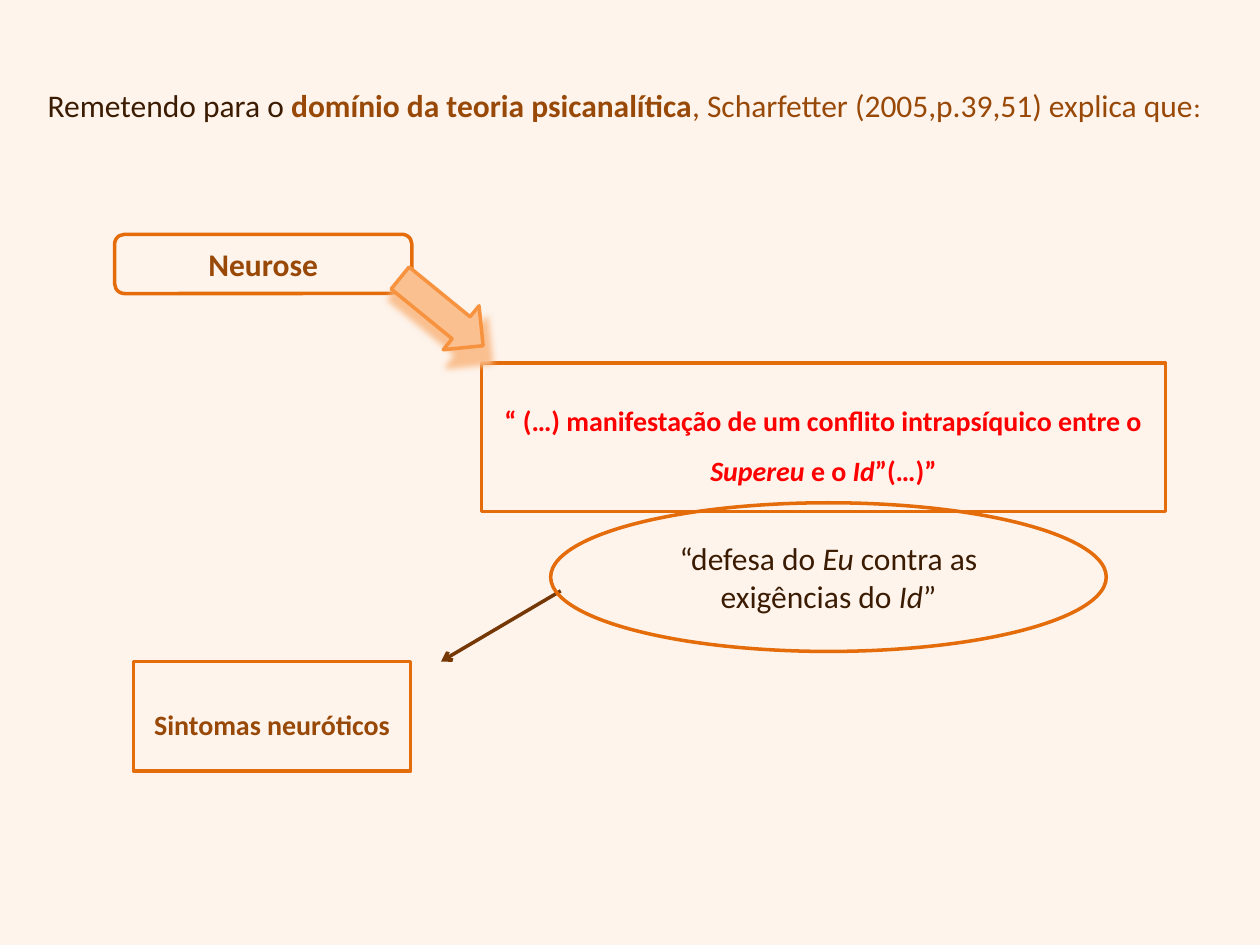
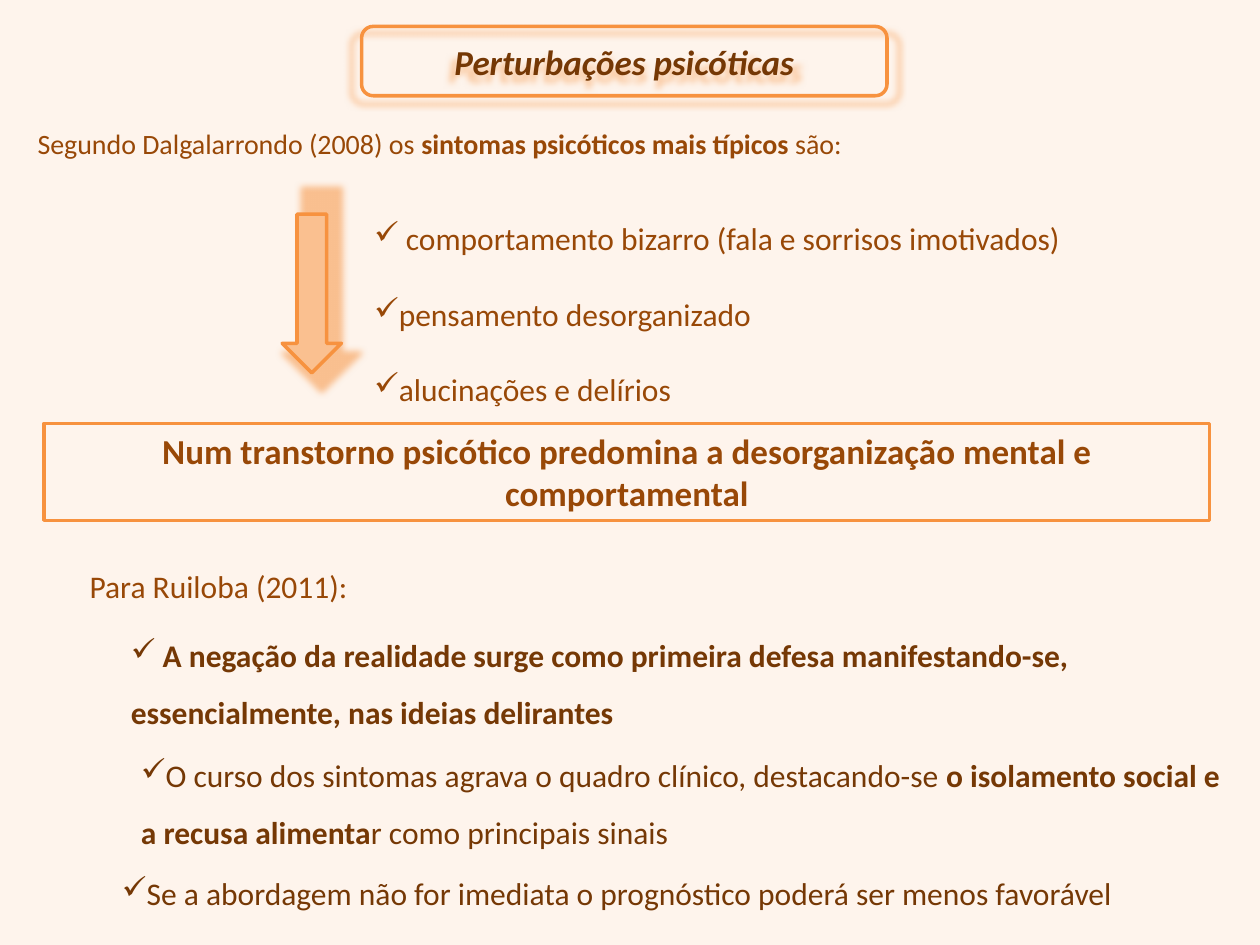
from dataclasses import dataclass

from lxml.etree import SubElement
from pptx import Presentation
from pptx.dml.color import RGBColor
from pptx.enum.shapes import MSO_CONNECTOR as Connector, MSO_SHAPE as Shape
from pptx.enum.text import MSO_ANCHOR as Anchor, MSO_AUTO_SIZE as AutoSize, PP_ALIGN as Align
from pptx.oxml.ns import qn
from pptx.util import Emu, Inches, Pt


@dataclass(frozen=True)
class Theme:
    """Colours, type sizes and line width shared by the slides."""
    font: str = "Calibri"
    background: str = "FEF4EC"
    dark: str = "3B1C03"
    deep: str = "753805"
    brown: str = "984807"
    alert: str = "FF0000"
    frame: str = "E46C0A"
    accent: str = "F7923F"
    soft: str = "FAC090"
    small: int = 16
    body: int = 18
    large: int = 20
    stroke: float = 2


@dataclass(frozen=True)
class Box:
    """An area on a grid of 100 columns by 75 rows."""
    column: float
    row: float
    columns: float
    rows: float

    def inside(self, column, row, columns, rows):
        """Return an area placed relative to this one."""
        return Box(self.column + column, self.row + row, columns, rows)

    def lengths(self):
        """Return left, top, width and height as lengths."""
        return [Emu(round(cells * CELL)) for cells in
                (self.column, self.row, self.columns, self.rows)]


THEME = Theme()
CELL = Inches(0.1)
PAGE = Box(0, 0, 100, 75)
BOLD, PLAIN, ITALIC = {"bold": True}, {"bold": False}, {"italic": True}


def rgb(value):
    """Turn a hex string into a colour."""
    return RGBColor.from_string(value)


def apply(target, values):
    """Set every attribute named in a dict."""
    for name, value in values.items():
        setattr(target, name, value)


def write(shape, paragraphs, size, color, bold=False, italic=False, align=Align.LEFT,
          spacing=1.0, bullet=None, **frame_values):
    """Fill a shape with paragraphs made of (text, changes) runs."""
    frame = shape.text_frame
    apply(frame, {"word_wrap": True, **frame_values})
    for index, runs in enumerate(paragraphs):
        paragraph = frame.paragraphs[0] if index == 0 else frame.add_paragraph()
        apply(paragraph, {"alignment": align, "line_spacing": spacing})
        if bullet:
            SubElement(paragraph._p.get_or_add_pPr(), qn("a:buChar"), char=bullet)
        for text, changes in runs:
            values = {"name": THEME.font, "size": Pt(size), "bold": bold,
                      "italic": italic, "color": color, **changes}
            run = paragraph.add_run()
            run.text = text
            run.font.color.rgb = rgb(values.pop("color"))
            apply(run.font, values)


def add_text(slide, box, paragraphs, **style):
    """Add a text box."""
    write(slide.shapes.add_textbox(*box.lengths()), paragraphs, **style)


def add_checks(slide, box, paragraphs, color, spacing):
    """Add a list marked with ticks."""
    add_text(slide, box, paragraphs, size=THEME.body, color=color, spacing=spacing,
             bullet="✓", auto_size=AutoSize.SHAPE_TO_FIT_TEXT)


def add_outline(slide, kind, box, line, fill=None):
    """Add a preset shape with a coloured outline."""
    shape = slide.shapes.add_shape(kind, *box.lengths())
    shape.shadow.inherit = False
    if fill:
        shape.fill.solid()
        shape.fill.fore_color.rgb = rgb(fill)
    else:
        shape.fill.background()
    shape.line.color.rgb = rgb(line)
    shape.line.width = Pt(THEME.stroke)
    return shape


def add_label(slide, kind, box, line, runs, **style):
    """Add an outlined shape with centred text."""
    shape = add_outline(slide, kind, box, line)
    write(shape, [runs], **{"align": Align.CENTER, "vertical_anchor": Anchor.MIDDLE, **style})
    return shape


def cast_shadow(shape, distance, direction, wide, high):
    """Give a shape a soft, scaled shadow."""
    effects = shape._element.spPr.find(qn("a:effectLst"))
    values = {"blurRad": Pt(4), "dist": Pt(distance), "dir": direction * 60000,
              "sx": wide * 1000, "sy": high * 1000, "algn": "ctr", "rotWithShape": 0}
    shadow = SubElement(effects, qn("a:outerShdw"),
                        {name: str(int(value)) if name != "algn" else value
                         for name, value in values.items()})
    SubElement(shadow, qn("a:srgbClr"), val=THEME.soft)


def add_block_arrow(slide, box, rotation, **shadow):
    """Add a filled arrow with its shadow."""
    arrow = add_outline(slide, Shape.DOWN_ARROW, box, THEME.accent, THEME.soft)
    arrow.rotation = rotation
    cast_shadow(arrow, **shadow)


def add_thin_arrow(slide, box, start, end):
    """Draw a line with an arrowhead between two points of a box."""
    points = [length for point in (start, end)
              for length in box.inside(*point, 0, 0).lengths()[:2]]
    connector = slide.shapes.add_connector(Connector.STRAIGHT, *points)
    connector.line.color.rgb = rgb(THEME.deep)
    connector.line.width = Pt(THEME.stroke)
    properties = connector._element.spPr
    SubElement(properties.find(qn("a:ln")), qn("a:tailEnd"), type="arrow")
    SubElement(properties, qn("a:effectLst"))


def neurosis_intro(slide, box):
    """Write the sentence that opens the neurosis slide."""
    brown = {"color": THEME.brown}
    add_text(slide, box, [[
        ("Remetendo para o ", {}),
        ("domínio da teoria psicanalítica", {**brown, **BOLD}),
        (", Scharfetter (2005,p.39,51) explica que", brown),
        (":", {**brown, "size": Pt(THEME.small)})]],
        size=THEME.body, color=THEME.dark, spacing=1.5, vertical_anchor=Anchor.MIDDLE)


def neurosis_diagram(slide, box):
    """Draw the way from neurosis to its symptoms."""
    add_label(slide, Shape.ROUNDED_RECTANGLE, box.inside(0, 0, 23.6, 4.7), THEME.frame,
              [("Neurose", {})], size=THEME.body, color=THEME.brown, bold=True)
    add_label(slide, Shape.RECTANGLE, box.inside(29.1, 10.2, 54.3, 11.8), THEME.frame, [
        ("“ (…) manifestação de um conflito intrapsíquico entre o ", {}),
        ("Supereu ", ITALIC), ("e o", {}), (" Id", ITALIC), ("”(…)”", {})],
        size=THEME.small, color=THEME.alert, bold=True, spacing=1.5)
    add_label(slide, Shape.RECTANGLE, box.inside(1.5, 33.9, 22, 8.7), THEME.frame,
              [("Sintomas neuróticos", {})],
              size=THEME.small, color=THEME.brown, bold=True, spacing=1.5)
    add_thin_arrow(slide, box, (35.4, 28.3), (25.9, 33.9))
    add_label(slide, Shape.OVAL, box.inside(34.6, 21.3, 44.1, 11.8), THEME.frame, [
        ("“defesa do ", {}), ("Eu", ITALIC), (" contra as exigências do ", {}),
        ("Id", ITALIC), ("”", {})], size=THEME.body, color=THEME.dark)
    add_block_arrow(slide, box.inside(23.7, 1.9, 4.5, 8.5), 309.2,
                    distance=10, direction=90, wide=110, high=110)


def psychosis_title(slide, box):
    """Draw the framed title of the psychosis slide."""
    title = add_label(slide, Shape.ROUNDED_RECTANGLE, box, THEME.accent,
                      [("Perturbações psicóticas", {})],
                      size=THEME.large, color=THEME.deep, bold=True, italic=True)
    cast_shadow(title, distance=4, direction=90, wide=104, high=100)


def typical_symptoms(slide, box):
    """List the typical symptoms and the conclusion drawn from them."""
    add_text(slide, box.inside(0, 0, 95.3, 5.5), [[
        ("Segundo Dalgalarrondo (2008) os ", {}),
        ("sintomas psicóticos mais típicos", BOLD), (" são:", {})]],
        size=THEME.small, color=THEME.brown, vertical_anchor=Anchor.MIDDLE,
        margin_bottom=Inches(0.17))
    symptoms = (" comportamento bizarro (fala e sorrisos imotivados)",
                "pensamento desorganizado", "alucinações e delírios")
    add_checks(slide, box.inside(26.7, 4.7, 62.2, 18.3),
               [[(symptom, {})] for symptom in symptoms], THEME.brown, 2.0)
    add_label(slide, Shape.RECTANGLE, box.inside(1.5, 24.4, 92.5, 7.7), THEME.accent, [
        ("Num transtorno psicótico predomina a desorganização mental e comportamental", {})],
        size=THEME.large, color=THEME.brown, bold=True,
        vertical_anchor=Anchor.TOP, auto_size=AutoSize.SHAPE_TO_FIT_TEXT)
    add_block_arrow(slide, box.inside(20.4, 7.8, 4.7, 12.6), 0,
                    distance=6, direction=338, wide=127, high=127)


def illness_course(slide, box):
    """List the defence, the course and the prognosis."""
    add_text(slide, box.inside(0, 0, 29.1, 5.6), [[("Para Ruiloba (2011):", {})]],
             size=THEME.body, color=THEME.brown, align=Align.CENTER, spacing=1.5,
             auto_size=AutoSize.SHAPE_TO_FIT_TEXT)
    points = (
        ((6.6, 5.5, 90.6, 9.6), [
            (" ", {}),
            ("A negação da realidade surge como primeira defesa manifestando-se, "
             "essencialmente, nas ideias delirantes", BOLD)]),
        ((7.4, 15, 89, 9.6), [
            ("O curso dos sintomas agrava o quadro clínico, destacando-se ", {}),
            ("o isolamento social e a recusa alimenta", BOLD),
            ("r como principais sinais", PLAIN)]),
        ((5.9, 24.4, 89, 5.1), [
            ("Se a abordagem não for imediata o prognóstico poderá ser menos favorável", {})]))
    for place, runs in points:
        add_checks(slide, box.inside(*place), [runs], THEME.deep, 1.5)


def add_slide(presentation, regions):
    """Add a slide with the shared background and draw its regions."""
    slide = presentation.slides.add_slide(presentation.slide_layouts[6])
    slide.background.fill.solid()
    slide.background.fill.fore_color.rgb = rgb(THEME.background)
    for draw, place in regions:
        draw(slide, PAGE.inside(*place))


def main():
    """Build and save the presentation."""
    presentation = Presentation()
    width, height = PAGE.lengths()[2:]
    apply(presentation, {"slide_width": width, "slide_height": height})
    add_slide(presentation, [(neurosis_intro, (2.8, 2.9, 94.5, 9.4)),
                             (neurosis_diagram, (9.1, 18.6, 83.4, 42.6))])
    add_slide(presentation, [(typical_symptoms, (2, 9.2, 95.3, 32.1)),
                             (psychosis_title, (28.7, 2.1, 41.7, 5.5)),
                             (illness_course, (2.8, 43, 97.2, 29.5))])
    presentation.save("out.pptx")


if __name__ == "__main__":
    main()
